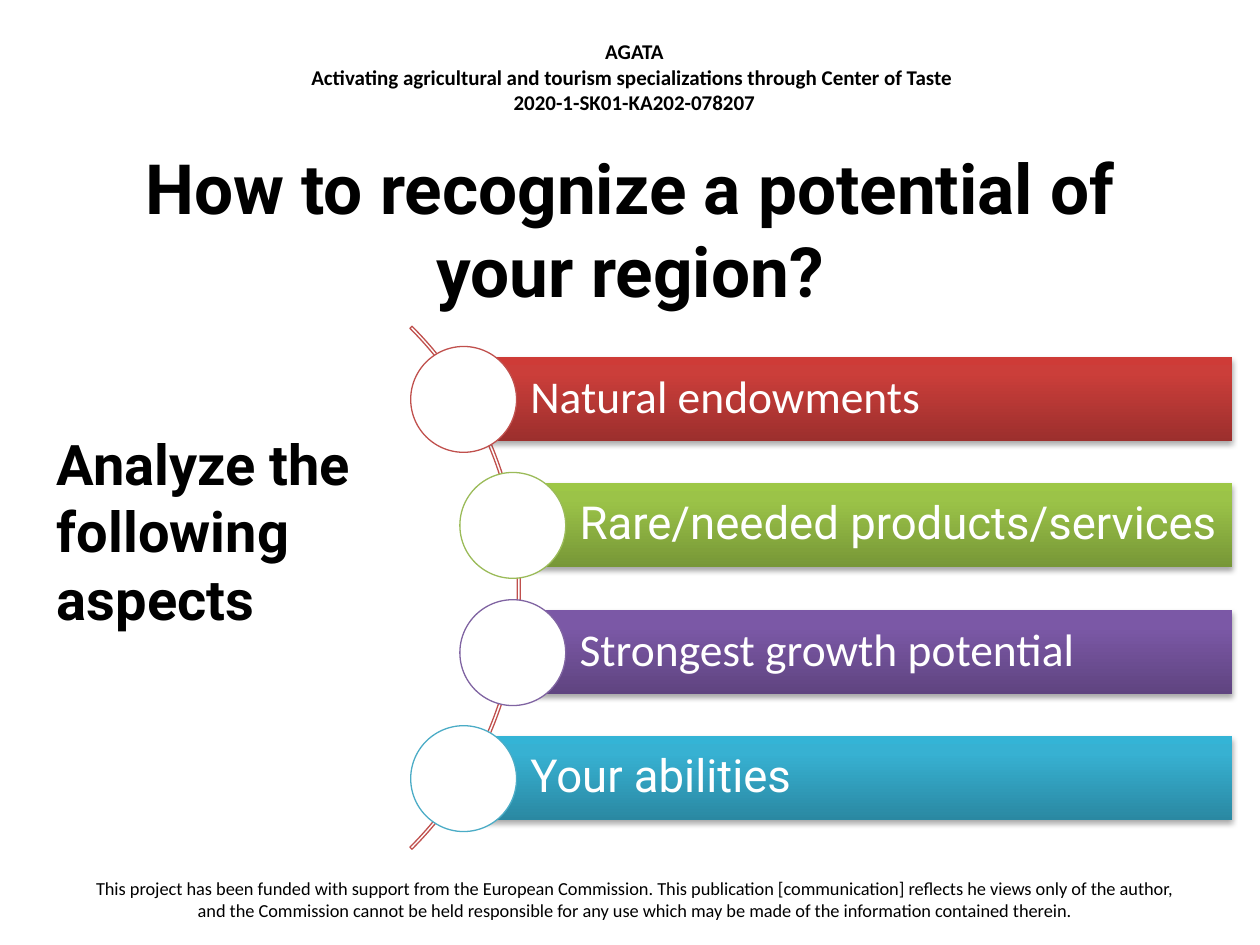
from copy import deepcopy
from typing import NamedTuple

from lxml import etree
from pptx import Presentation
from pptx.dml.color import RGBColor
from pptx.enum.shapes import MSO_SHAPE
from pptx.enum.text import MSO_ANCHOR, MSO_AUTO_SIZE, PP_ALIGN
from pptx.oxml.ns import qn
from pptx.util import Emu, Pt

RECTANGLE, OVAL, BLOCK_ARC = MSO_SHAPE.RECTANGLE, MSO_SHAPE.OVAL, MSO_SHAPE.BLOCK_ARC
TOP, MIDDLE = MSO_ANCHOR.TOP, MSO_ANCHOR.MIDDLE
LEFT, CENTER = PP_ALIGN.LEFT, PP_ALIGN.CENTER
NO_AUTOFIT = MSO_AUTO_SIZE.NONE

EMU_PER_PX = 9144  # 100 px to the inch
BLACK = RGBColor(0x00, 0x00, 0x00)
WHITE = RGBColor(0xFF, 0xFF, 0xFF)
RED = RGBColor(0xC0, 0x50, 0x4D)
GREEN = RGBColor(0x9B, 0xBB, 0x59)
PURPLE = RGBColor(0x80, 0x64, 0xA2)
CYAN = RGBColor(0x4B, 0xAC, 0xC6)
RED_SHADES = (RGBColor(0x9C, 0x2F, 0x2D), RGBColor(0xCB, 0x3E, 0x3A), RGBColor(0xCE, 0x3B, 0x37))
GREEN_SHADES = (RGBColor(0x77, 0x97, 0x37), RGBColor(0x9B, 0xC3, 0x48), RGBColor(0x9D, 0xC7, 0x46))
PURPLE_SHADES = (RGBColor(0x5F, 0x44, 0x80), RGBColor(0x7B, 0x58, 0xA6), RGBColor(0x7C, 0x57, 0xA8))
CYAN_SHADES = (RGBColor(0x2A, 0x88, 0xA2), RGBColor(0x37, 0xB1, 0xD2), RGBColor(0x34, 0xB4, 0xD6))
SHADE_POSITIONS = (0, 0.8, 1)

BAR_RIGHT, BAR_HEIGHT, FIRST_BAR_TOP = 978, 67, 283
TWO_BAR_PITCH = 201
CIRCLE_SIZE = 84


class Box(NamedTuple):
    left: int
    top: int
    width: int
    height: int


class Style(NamedTuple):
    font: str
    size: float
    color: RGBColor = BLACK
    bold: bool = False


class Aspect(NamedTuple):
    text: str
    font: str
    left: int
    outline: RGBColor
    shades: tuple[RGBColor, ...]


ASPECTS = (
    Aspect("Natural endowments", "Calibri", 368, RED, RED_SHADES),
    Aspect("Rare/needed products/services", "Roboto", 407, GREEN, GREEN_SHADES),
    Aspect("Strongest growth potential", "Calibri", 407, PURPLE, PURPLE_SHADES),
    Aspect("Your abilities", "Roboto", 368, CYAN, CYAN_SHADES),
)


def px(length: int) -> Emu:
    return Emu(length * EMU_PER_PX)


def write(shape, lines: tuple[str, ...], style: Style, align=CENTER, anchor=TOP) -> None:
    frame = shape.text_frame
    frame.word_wrap = True
    frame.auto_size = NO_AUTOFIT
    frame.vertical_anchor = anchor
    for index, line in enumerate(lines):
        para = frame.add_paragraph() if index else frame.paragraphs[0]
        para.alignment = align
        para.space_before = Pt(0)
        span = para.add_run()
        span.text = line
        span.font.name = style.font
        span.font.size = Pt(style.size)
        span.font.bold = style.bold
        span.font.color.rgb = style.color


def place(shape, box: Box) -> None:
    shape.left, shape.top, shape.width, shape.height = map(px, box)


def add_label(page, box: Box, lines: tuple[str, ...], style: Style) -> None:
    write(page.shapes.add_textbox(*map(px, box)), lines, style)


def add_outlined(page, kind, box: Box, color: RGBColor):
    shape = page.shapes.add_shape(kind, *map(px, box))
    shape.shadow.inherit = False
    shape.fill.solid()
    shape.fill.fore_color.rgb = WHITE
    shape.line.color.rgb = color
    shape.line.width = Pt(0.75)
    return shape


def shade(shape, colors: tuple[RGBColor, ...]) -> None:
    """Fill from bottom to top with three colours."""
    shape.fill.gradient()
    shape.fill.gradient_angle = 90
    stop_list = shape._element.spPr.find(qn("a:gradFill")).find(qn("a:gsLst"))
    stop_list.insert(1, deepcopy(stop_list[0]))
    for stop, position, color in zip(shape.fill.gradient_stops, SHADE_POSITIONS, colors):
        stop.position = position
        stop.color.rgb = color


def add_shadow(shape) -> None:
    shape.shadow.inherit = False
    effects = shape._element.spPr.find(qn("a:effectLst"))
    shadow = etree.SubElement(effects, qn("a:outerShdw"), blurRad="40000", dist="23000",
                              dir="5400000", rotWithShape="0")
    color = etree.SubElement(shadow, qn("a:srgbClr"), val=str(BLACK))
    etree.SubElement(color, qn("a:alpha"), val="35000")


def add_aspect(page, aspect: Aspect, top: int) -> None:
    box = Box(aspect.left, top, BAR_RIGHT - aspect.left, BAR_HEIGHT)
    bar = page.shapes.add_shape(RECTANGLE, *map(px, box))
    shade(bar, aspect.shades)
    bar.line.fill.background()
    add_shadow(bar)
    write(bar, (aspect.text,), Style(aspect.font, 26, WHITE), LEFT, MIDDLE)
    frame = bar.text_frame
    frame.margin_left = px(53)
    frame.margin_top = frame.margin_right = frame.margin_bottom = px(7)
    frame.paragraphs[0].line_spacing = 0.9

    # Circle centred on the left end of the bar
    circle = Box(aspect.left - CIRCLE_SIZE // 2, top - (CIRCLE_SIZE - BAR_HEIGHT) // 2,
                 CIRCLE_SIZE, CIRCLE_SIZE)
    add_outlined(page, OVAL, circle, aspect.outline)


def main() -> None:
    deck = Presentation()
    deck.slide_width, deck.slide_height = px(1000), px(750)
    page = deck.slides.add_slide(deck.slide_layouts[1])

    # Project header and funding note
    add_label(page, Box(208, 26, 591, 71), (
        "AGATA",
        "Activating agricultural and tourism specializations through Center of Taste ",
        "2020-1-SK01-KA202-078207",
    ), Style("Calibri", 12, bold=True))
    add_label(page, Box(54, 691, 900, 47), (
        "This project has been funded with support from the European Commission. "
        "This publication [communication] reflects he views only of the author, "
        "and the Commission cannot be held responsible for any use which may be made "
        "of the information contained therein.",
    ), Style("Calibri", 10.5))

    # Title and lead-in
    title, body = page.placeholders
    place(title, Box(50, 112, 900, 138))
    write(title, ("How to recognize a potential of your region?",),
          Style("Roboto", 39.6, bold=True), anchor=MIDDLE)
    place(body, Box(35, 336, 283, 194))
    properties = body.text_frame.paragraphs[0]._p.get_or_add_pPr()
    properties.set("marL", "0")
    properties.set("indent", "0")
    etree.SubElement(properties, qn("a:buNone"))
    write(body, ("Analyze the following aspects",), Style("Roboto", 32, bold=True), LEFT)

    # Arc that links the aspects
    arc = add_outlined(page, BLOCK_ARC, Box(-174, 173, 587, 587), RED)
    arc.fill.background()
    for index, value in enumerate((189, 27, 0.004)):
        arc.adjustments[index] = value

    # Aspects at equal steps
    for index, aspect in enumerate(ASPECTS):
        add_aspect(page, aspect, FIRST_BAR_TOP + index * TWO_BAR_PITCH // 2)

    deck.save("out.pptx")


if __name__ == "__main__":
    main()
